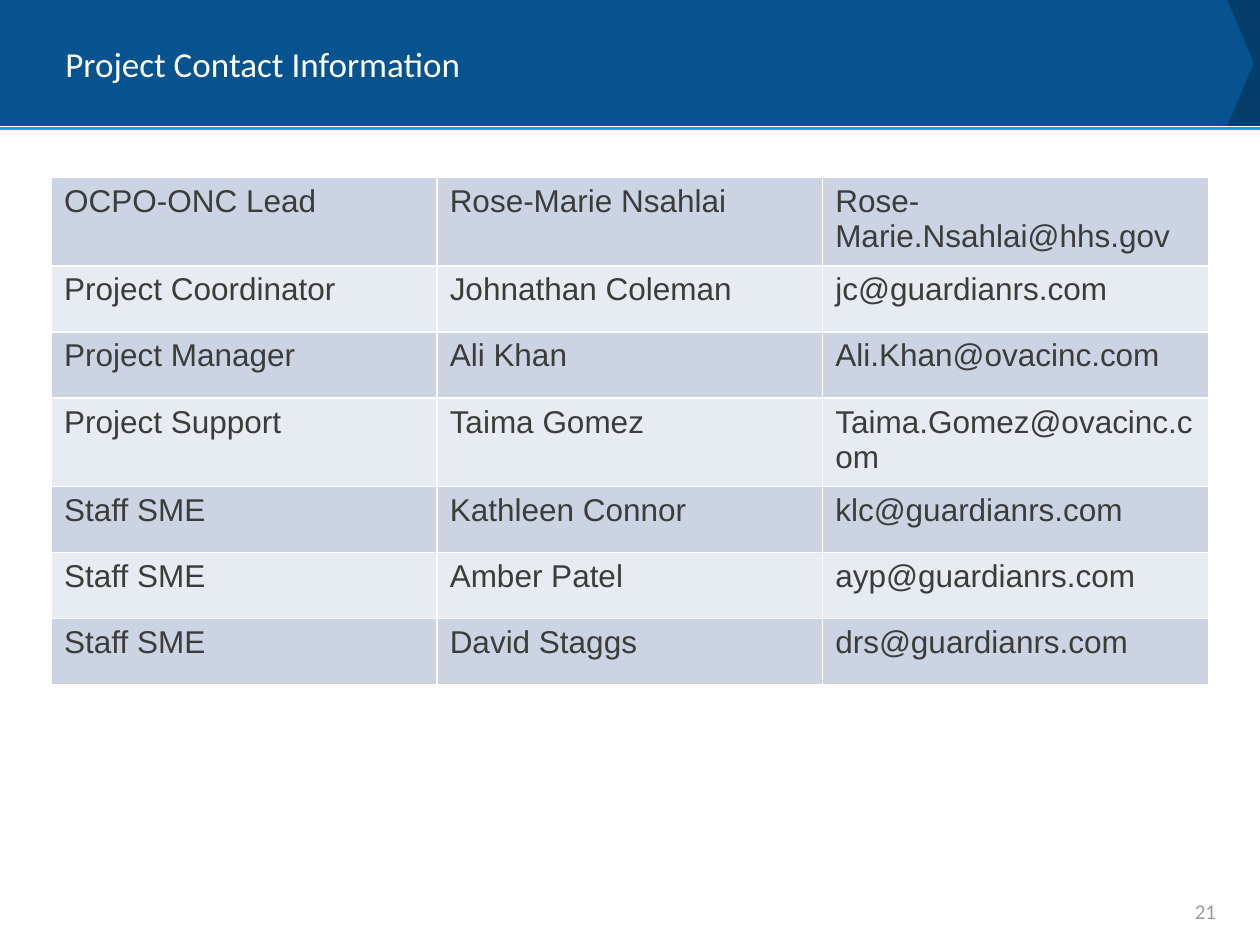
import dataclasses

import pptx
import pptx.dml.color
import pptx.enum.shapes
import pptx.enum.text
import pptx.oxml
import pptx.oxml.ns
import pptx.util

Inches = pptx.util.Inches
SHAPES = pptx.enum.shapes.MSO_SHAPE
ALIGN = pptx.enum.text.PP_ALIGN


@dataclasses.dataclass(frozen=True)
class Theme:
    heading_font: str = "Calibri"
    table_font: str = "Arial"
    title_size: int = 20
    table_size: int = 18
    number_size: int = 12
    banner: str = "07538F"
    banner_end: str = "053E6B"
    rule: str = "00A8E1"
    white: str = "FFFFFF"
    body: str = "3C3C3B"
    muted: str = "9E9E9C"
    bands: tuple = ("CCD4E4", "E7EBF2")


THEME = Theme()
SLIDE_WIDTH, SLIDE_HEIGHT = 10, 7.5
BANNER_HEIGHT = 1
TABLE_LEFT, TABLE_TOP = 0.41, 1.41
COLUMN_WIDTH, ROW_HEIGHT = 3.06, 0.53 - 0.005

CONTACTS = [
    ("OCPO-ONC Lead", "Rose-Marie Nsahlai", "Rose-Marie.Nsahlai@hhs.gov"),
    ("Project Coordinator", "Johnathan Coleman", "jc@guardianrs.com"),
    ("Project Manager", "Ali Khan", "Ali.Khan@ovacinc.com"),
    ("Project Support", "Taima Gomez", "Taima.Gomez@ovacinc.com"),
    ("Staff SME", "Kathleen Connor", "klc@guardianrs.com"),
    ("Staff SME", "Amber Patel", "ayp@guardianrs.com"),
    ("Staff SME", "David Staggs", "drs@guardianrs.com"),
]


def rgb(color):
    return pptx.dml.color.RGBColor.from_string(color)


def format_text(frame, font_name, size, color, align=ALIGN.LEFT):
    for paragraph in frame.paragraphs:
        paragraph.alignment = align
        for run in paragraph.runs:
            run.font.name = font_name
            run.font.size = pptx.util.Pt(size)
            run.font.color.rgb = rgb(color)


def add_banner_plate(slide, left, width, point, color):
    plate = slide.shapes.add_shape(
        SHAPES.PENTAGON, Inches(left), 0, Inches(width), Inches(BANNER_HEIGHT))
    plate.adjustments[0] = point
    plate.shadow.inherit = False
    plate.fill.solid()
    plate.fill.fore_color.rgb = rgb(color)
    plate.line.fill.background()


def add_rule(slide, top):
    rule = slide.shapes.add_connector(
        pptx.enum.shapes.MSO_CONNECTOR.STRAIGHT,
        0, Inches(top), Inches(SLIDE_WIDTH), Inches(top))
    rule.line.color.rgb = rgb(THEME.rule)
    rule.line.width = pptx.util.Pt(2.25)
    properties = rule.element.find(pptx.oxml.ns.qn("p:spPr"))
    properties.append(pptx.oxml.parse_xml(
        f'<a:effectLst {pptx.oxml.ns.nsdecls("a")}/>'))


def add_label(slide, text, bounds, size, color, align=ALIGN.LEFT):
    label = slide.shapes.add_textbox(*map(Inches, bounds))
    frame = label.text_frame
    frame.word_wrap = True
    frame.vertical_anchor = pptx.enum.text.MSO_ANCHOR.MIDDLE
    frame.text = text
    format_text(frame, THEME.heading_font, size, color, align)


def add_cell_borders(cell):
    properties = cell._tc.get_or_add_tcPr()
    for side in ("lnL", "lnR", "lnT", "lnB"):
        properties.append(pptx.oxml.parse_xml(
            f'<a:{side} {pptx.oxml.ns.nsdecls("a")} w="{pptx.util.Pt(1)}">'
            f'<a:solidFill><a:srgbClr val="{THEME.white}"/></a:solidFill>'
            f'</a:{side}>'))


def add_contact_table(slide):
    rows, columns = len(CONTACTS), len(CONTACTS[0])
    table = slide.shapes.add_table(
        rows, columns, Inches(TABLE_LEFT), Inches(TABLE_TOP),
        Inches(columns * COLUMN_WIDTH), Inches(rows * ROW_HEIGHT)).table
    table.first_row = False
    table.horz_banding = False
    for row, contact in enumerate(CONTACTS):
        for column, text in enumerate(contact):
            cell = table.cell(row, column)
            add_cell_borders(cell)
            cell.fill.solid()
            cell.fill.fore_color.rgb = rgb(THEME.bands[row % 2])
            cell.text_frame.text = text
            format_text(cell.text_frame, THEME.table_font,
                        THEME.table_size, THEME.body)


def main():
    deck = pptx.Presentation()
    deck.slide_width = Inches(SLIDE_WIDTH)
    deck.slide_height = Inches(SLIDE_HEIGHT)
    slide = deck.slides.add_slide(deck.slide_layouts[6])

    add_banner_plate(slide, 9.55, 0.45, 0, THEME.banner_end)
    add_banner_plate(slide, 0, 9.95, 0.21, THEME.banner)
    add_rule(slide, 1.02)
    add_label(slide, "Project Contact Information", (0.42, 0.08, 9.17, 0.85),
              THEME.title_size, THEME.white)
    add_contact_table(slide)
    add_label(slide, "21", (7.42, 7.11, 2.33, 0.25),
              THEME.number_size, THEME.muted, ALIGN.RIGHT)

    deck.save("out.pptx")


if __name__ == "__main__":
    main()
